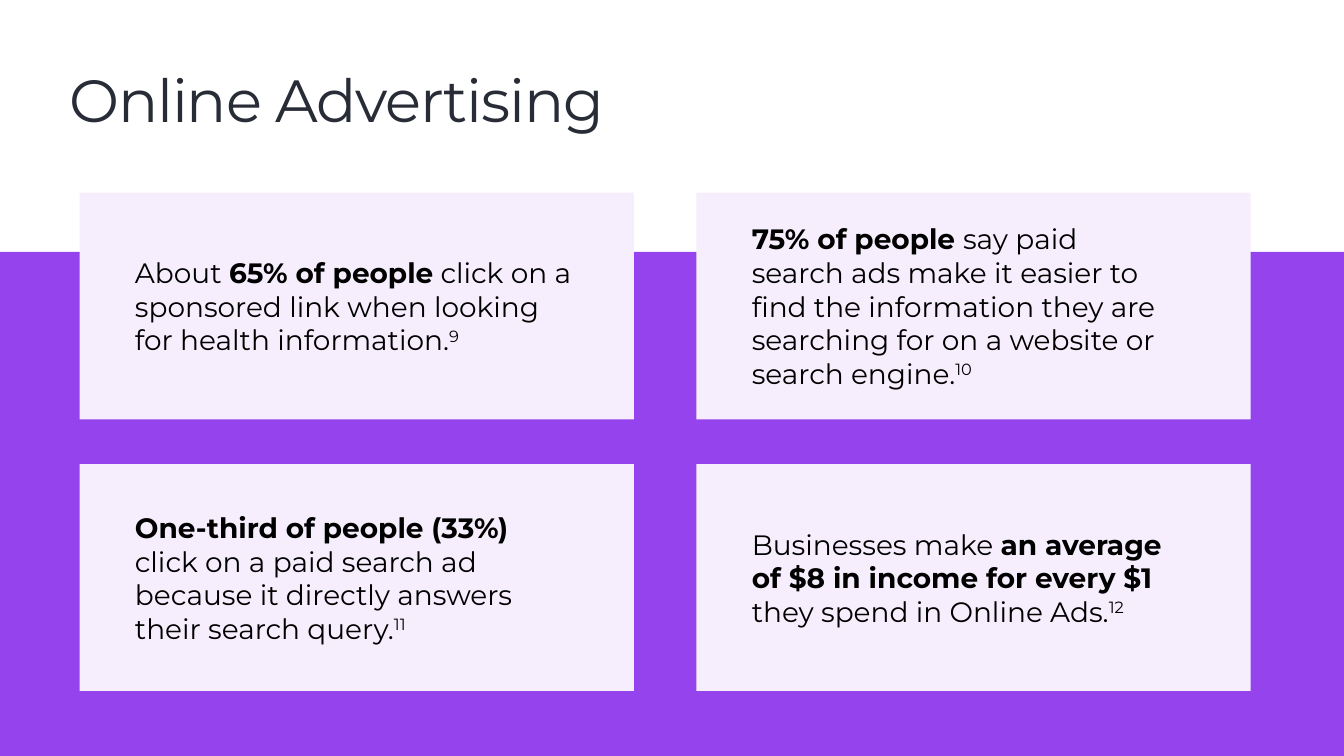
from pptx import Presentation
from pptx.dml.color import RGBColor
from pptx.enum.shapes import MSO_SHAPE
from pptx.enum.text import MSO_ANCHOR
from pptx.util import Inches, Pt

PURPLE = RGBColor(0x95, 0x44, 0xED)
LILAC = RGBColor(0xF6, 0xEE, 0xFD)
INK = RGBColor(0x28, 0x2C, 0x36)
BLACK = RGBColor(0, 0, 0)
WIDE, HIGH = 26.67, 15
LINE = 0.67

CARDS = [
    (3, [("About ", ""), ("65% of people", "b"),
         (" click on a sponsored link when looking for health information.", ""),
         ("9", "sup")]),
    (5, [("75% of people ", "b"), ("say paid", ""), ("", "br"),
         ("search ads make it easier to find the information they are "
          "searching for on a website or search engine.", ""),
         ("10", "sup")]),
    (4, [("One-third of people (33%)", "b"), ("", "br"),
         ("click on a paid search ad because it directly answers their search query.", ""),
         ("11", "sup")]),
    (3, [("Businesses make ", ""),
         ("an average of $8 in income for every $1 ", "b"),
         ("they spend in Online Ads.", ""), ("12", "sup")]),
]


def add_rect(slide, x, y, w, h, color):
    rect = slide.shapes.add_shape(
        MSO_SHAPE.RECTANGLE, Inches(x), Inches(y), Inches(w), Inches(h))
    rect.shadow.inherit = False
    rect.fill.solid()
    rect.fill.fore_color.rgb = color
    rect.line.fill.background()


def add_text(slide, x, y, w, h):
    box = slide.shapes.add_textbox(Inches(x), Inches(y), Inches(w), Inches(h))
    frame = box.text_frame
    frame.word_wrap = True
    frame.vertical_anchor = MSO_ANCHOR.MIDDLE
    return frame


def add_run(para, text, size, color, bold=False):
    run = para.add_run()
    run.text = text
    run.font.name = "Montserrat"
    run.font.size = Pt(size)
    run.font.color.rgb = color
    run.font.bold = bold
    return run.font._element


def add_title(slide, x, y, w, h):
    frame = add_text(slide, x, y, w, h)
    frame.margin_left = frame.margin_right = Inches(0.06)
    frame.margin_top = frame.margin_bottom = Inches(0.06)
    props = add_run(frame.paragraphs[0], "Online Advertising", 85, INK)
    props.set("spc", "-170")


def add_card(slide, x, y, w, h, lines, runs):
    add_rect(slide, x, y, w, h, LILAC)
    tall = lines * LINE + 0.11
    para = add_text(slide, x + 1, y + (h - tall) / 2, w - 2, tall).paragraphs[0]
    for text, style in runs:
        if style == "br":
            para.add_line_break()
            continue
        props = add_run(para, text, 40, BLACK, style == "b")
        if style == "sup":
            props.set("baseline", "30000")


def add_grid(slide, x, y, w, h):
    wide, high = 11, 4.5
    for i, (lines, runs) in enumerate(CARDS):
        row, col = divmod(i, 2)
        add_card(slide, x + col * (w - wide), y + row * (h - high),
                 wide, high, lines, runs)


def main():
    deck = Presentation()
    deck.slide_width, deck.slide_height = Inches(WIDE), Inches(HIGH)
    slide = deck.slides.add_slide(deck.slide_layouts[6])
    add_rect(slide, 0, 5, WIDE, 10, PURPLE)
    add_title(slide, 1.32, 1.18, 24.03, 1.57)
    add_grid(slide, 1.58, 3.82, 23.24, 9.89)
    deck.save("out.pptx")


if __name__ == "__main__":
    main()
